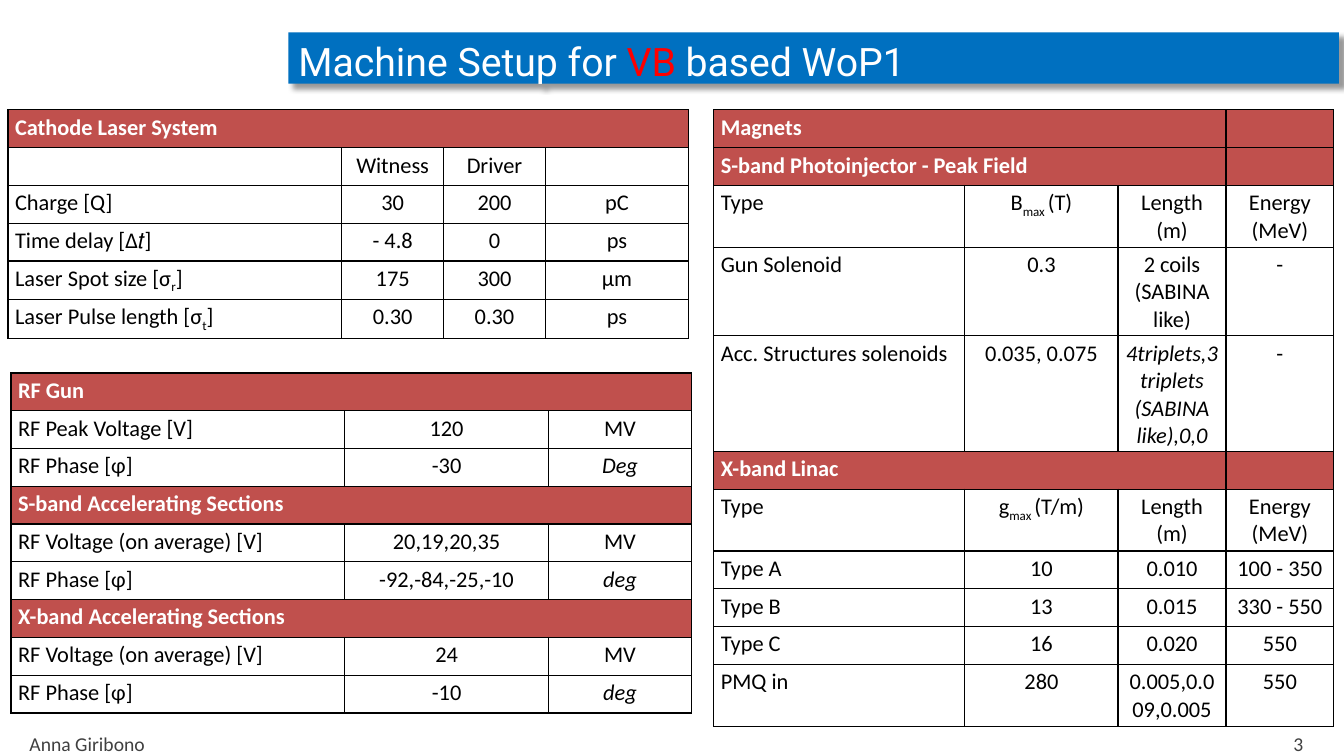
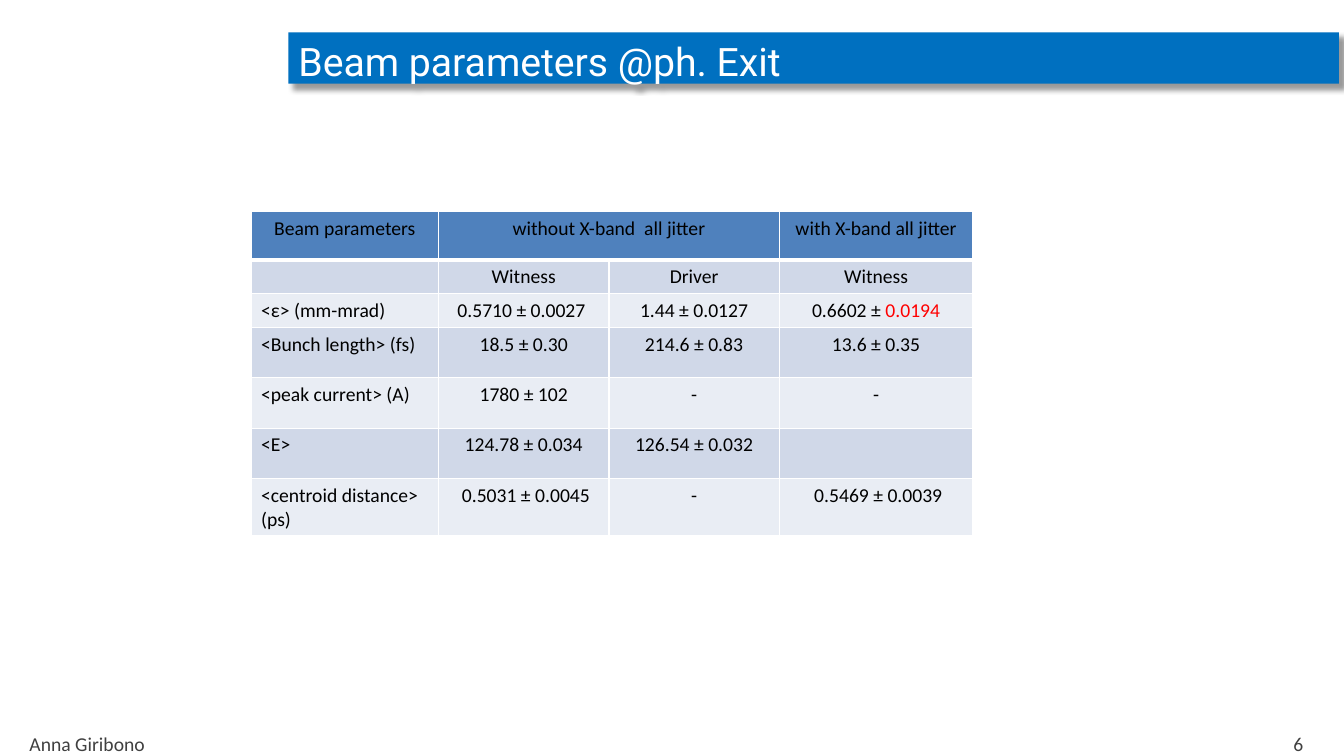
"""Build two slides of accelerator set-up and beam parameter tables."""
from dataclasses import dataclass

from lxml.etree import SubElement
from pptx import Presentation
from pptx.dml.color import RGBColor
from pptx.enum.text import MSO_ANCHOR, PP_ALIGN
from pptx.oxml import parse_xml
from pptx.oxml.ns import nsdecls, qn
from pptx.util import Inches, Pt


@dataclass(frozen=True)
class Theme:
    title_font: str = "Roboto"
    body_font: str = "Calibri"
    title_size: int = 28
    setup_size: int = 16
    small_size: int = 14
    title_fill: str = "0070C0"
    band: str = "C0504D"
    header: str = "4F81BD"
    stripes: tuple = ("E9EDF4", "D0D8E8")
    white: str = "FFFFFF"
    black: str = "000000"
    red: str = "FF0000"
    footer: str = "404040"


T = Theme()
AUTHOR = "Anna Giribono"
DEG = [("deg", "italic")]

LASER = [
    ("Cathode Laser System", None, None, None),
    ("", "Witness", "Driver", ""),
    ("Charge [Q]", "30", "200", "pC"),
    ("Time delay [Δ𝑡]", "- 4.8", "0", "ps"),
    ([("Laser Spot size [σ", ""), ("r", "sub"), ("]", "")], "175", "300", "µm"),
    ([("Laser Pulse length [σ", ""), ("t", "sub"), ("]", "")], "0.30", "0.30", "ps"),
]
RF = [
    ("RF Gun", None, None),
    ("RF Peak Voltage [V]", "120", "MV"),
    ("RF Phase [φ]", "-30", [("Deg", "italic")]),
    ("S-band Accelerating Sections", None, None),
    ("RF Voltage (on average) [V]", "20,19,20,35", "MV"),
    ("RF Phase [φ]", "-92,-84,-25,-10", DEG),
    ("X-band Accelerating Sections", None, None),
    ("RF Voltage (on average) [V]", "24", "MV"),
    ("RF Phase [φ]", "-10", DEG),
]
MAGNETS = [
    ("Magnets", None, None, ""),
    ("S-band Photoinjector - Peak Field", None, None, ""),
    ("Type", [("B", ""), ("max ", "sub"), ("(T)", "")], "Length (m)", "Energy\n(MeV)"),
    ("Gun Solenoid", "0.3", "2 coils (SABINA like)", "-"),
    ("Acc. Structures solenoids", "0.035, 0.075",
     [("4triplets,3triplets (SABINA like),0,0", "italic")], "-"),
    ("X-band Linac", None, None, ""),
    ("Type", [("g", ""), ("max ", "sub"), ("(T/m)", "")], "Length (m)", "Energy\n(MeV)"),
    ("Type A", "10", "0.010", "100 - 350"),
    ("Type B", "13", "0.015", "330 - 550"),
    ("Type C", "16", "0.020", "550"),
    ("PMQ in", "280", "0.005,0.009,0.005", "550"),
]
BEAM = [
    ("Beam parameters", "without X-band  all jitter", None, "with X-band all jitter"),
    ("", "Witness", "Driver", "Witness"),
    ("<ε> (mm-mrad)", "0.5710 ± 0.0027 ", "1.44 ± 0.0127",
     [("0.6602 ± ", ""), ("0.0194", "red")]),
    ("<Bunch length> (fs)", "18.5 ± 0.30", "214.6 ± 0.83", "13.6 ± 0.35"),
    ("<peak current> (A)", "1780 ± 102", "-", "-"),
    ("<E>", "124.78 ± 0.034", "126.54 ± 0.032", ""),
    ("<centroid distance> (ps)", " 0.5031 ± 0.0045", "-", " 0.5469 ± 0.0039"),
]
BEAM_HEIGHTS = [0.48, 0.28, 0.28, 0.5, 0.5, 0.5, 0.5]
SETUP_ROW = 0.375

SLIDES = [
    (3, [("Machine Setup for ", ""), ("VB", "red"), (" based WoP1", "")], [
        ("setup", RF, (0.11, 3.7), (3.31, 2.02, 1.42)),
        ("setup", MAGNETS, (7.08, 1.09), (2.49, 1.52, 1.07, 1.07)),
        ("setup", LASER, (0.08, 1.09), (3.31, 1.01, 1.01, 1.42)),
    ]),
    (6, "Beam parameters @ph. Exit", [
        ("beam", BEAM, (2.49, 2.1), (1.86, 1.69, 1.69, 1.92)),
    ]),
]


def rgb(color):
    return RGBColor.from_string(color)


def write(p, content, font, size, color, bold=False, align=PP_ALIGN.LEFT):
    p.alignment = align
    p.font.name, p.font.size, p.font.bold = font, Pt(size), bold
    p.font.color.rgb = rgb(color)
    if isinstance(content, str):
        p.text = content
        return
    for text, style in content:
        r = p.add_run()
        r.text = text
        if style == "red":
            r.font.color.rgb = rgb(T.red)
        elif style == "italic":
            r.font.italic = True
        elif style == "sub":
            r.font._element.set("baseline", "-25000")


def set_borders(cell, color, bottom=1):
    tc_pr = cell._tc.get_or_add_tcPr()
    for side, width in (("L", 1), ("R", 1), ("T", 1), ("B", bottom)):
        ln = SubElement(tc_pr, qn(f"a:ln{side}"), w=str(Pt(width)))
        fill = SubElement(ln, qn("a:solidFill"))
        SubElement(fill, qn("a:srgbClr"), val=color)


def format_setup(cell, row, r, c):
    is_band = row[1] is None
    cell.margin_left = cell.margin_right = Inches(0.07)
    cell.margin_top = cell.margin_bottom = Inches(0.04)
    set_borders(cell, T.black)
    align = PP_ALIGN.CENTER if c else PP_ALIGN.LEFT
    color = T.white if is_band else T.black
    return T.band if is_band else T.white, T.setup_size, color, is_band, align


def format_beam(cell, row, r, c):
    set_borders(cell, T.white, bottom=1 if r else 3)
    align = PP_ALIGN.LEFT if r and not c else PP_ALIGN.CENTER
    return T.stripes[r % 2] if r else T.header, T.small_size, T.black, False, align


def add_grid(s, kind, rows, at, widths):
    heights = BEAM_HEIGHTS if kind == "beam" else [SETUP_ROW] * len(rows)
    format_cell = format_beam if kind == "beam" else format_setup
    size = sum(widths), sum(heights)
    table = s.shapes.add_table(len(rows), len(widths), *map(Inches, at + size)).table
    table.first_row = table.horz_banding = False
    for column, width in zip(table.columns, widths):
        column.width = Inches(width)
    for r, (row, height) in enumerate(zip(rows, heights)):
        table.rows[r].height = Inches(height)
        for c, content in enumerate(row):
            cell = table.cell(r, c)
            fill, points, color, bold, align = format_cell(cell, row, r, c)
            cell.fill.solid()
            cell.fill.fore_color.rgb = rgb(fill)
            write(cell.text_frame.paragraphs[0], content or "", T.body_font,
                  points, color, bold, align)
        if None in row:
            first = row.index(None)
            table.cell(r, first - 1).merge(table.cell(r, first + row.count(None) - 1))


def add_title(s, content):
    sp = s.shapes.title
    sp.left, sp.top, sp.width, sp.height = map(Inches, (2.86, 0.32, 10.42, 0.51))
    sp.fill.solid()
    sp.fill.fore_color.rgb = rgb(T.title_fill)
    sp._element.spPr.append(parse_xml(
        f'<a:effectLst {nsdecls("a")}><a:outerShdw blurRad="{Pt(4)}" dist="{Pt(5)}" '
        f'dir="2700000" algn="tl" rotWithShape="0"><a:srgbClr val="{T.black}">'
        '<a:alpha val="40000"/></a:srgbClr></a:outerShdw></a:effectLst>'))
    tf = sp.text_frame
    tf.vertical_anchor = MSO_ANCHOR.TOP
    write(tf.paragraphs[0], content, T.title_font, T.title_size, T.white)


def add_footer(s, number):
    for text, left, width, align in (
            (str(number), 12.73, 0.77, PP_ALIGN.LEFT),
            (AUTHOR, -0.26, 2.25, PP_ALIGN.CENTER)):
        box = s.shapes.add_textbox(*map(Inches, (left, 7.21, width, 0.34)))
        tf = box.text_frame
        tf.word_wrap = True
        write(tf.paragraphs[0], text, T.body_font, T.small_size, T.footer, align=align)


def main():
    prs = Presentation()
    prs.slide_width, prs.slide_height = Inches(13.33), Inches(7.5)
    for number, title, grids in SLIDES:
        s = prs.slides.add_slide(prs.slide_layouts[5])
        add_footer(s, number)
        add_title(s, title)
        for grid in grids:
            add_grid(s, *grid)
    prs.save("out.pptx")


if __name__ == "__main__":
    main()
